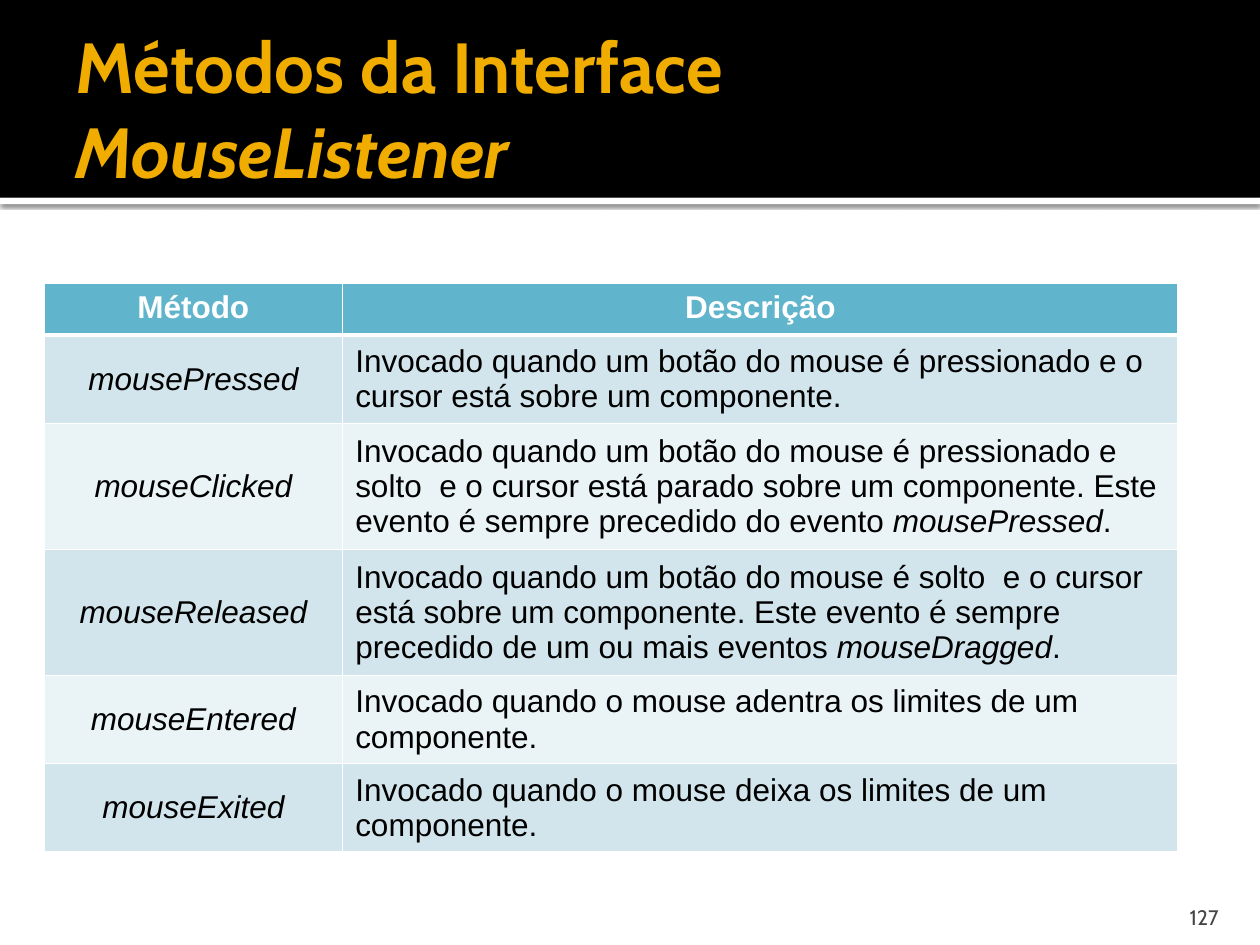
import pptx
import pptx.dml.color
import pptx.enum.shapes
import pptx.enum.text
import pptx.oxml
import pptx.oxml.ns
import pptx.util
from pptx.util import Inches

COLORS = {
    "white": "FFFFFF", "black": "000000", "title": "F0AD00", "number": "454545",
    "header": "60B5CC", "odd": "D2E5EC", "even": "EAF3F6",
}
ALIGN = pptx.enum.text.PP_ALIGN
ANCHOR = pptx.enum.text.MSO_ANCHOR
NAMESPACE = pptx.oxml.ns.nsdecls("a")

# Each description is a list of (text, italic) spans
HEADINGS = ["Método", "Descrição"]
METHODS = [
    ("mousePressed", [("Invocado quando um botão do mouse é pressionado e o cursor "
                       "está sobre um componente.", False)]),
    ("mouseClicked", [("Invocado quando um botão do mouse é pressionado e solto  e o cursor "
                       "está parado sobre um componente. Este evento é sempre precedido "
                       "do evento ", False), ("mousePressed", True), (".", False)]),
    ("mouseReleased", [("Invocado quando um botão do mouse é solto  e o cursor está sobre "
                        "um componente. Este evento é sempre precedido de um ou mais "
                        "eventos ", False), ("mouseDragged", True), (".", False)]),
    ("mouseEntered", [("Invocado quando o mouse adentra os limites de um componente.", False)]),
    ("mouseExited", [("Invocado quando o mouse deixa os limites de um componente.", False)]),
]


def rgb(name):
    return pptx.dml.color.RGBColor.from_string(COLORS[name])


def add_span(para, text, font="Arial", size=18, color="black", bold=False, italic=False):
    span = para.add_run()
    span.text = text
    span.font.name = font
    span.font.size = pptx.util.Pt(size)
    span.font.color.rgb = rgb(color)
    span.font.bold = bold
    span.font.italic = italic


class SlideBuilder:
    heading_font = "Cabin"

    def __init__(self, page):
        self.page = page

    def band(self, top, height, color, shadow=False):
        shape = self.page.shapes.add_shape(
            pptx.enum.shapes.MSO_SHAPE.RECTANGLE, 0, Inches(top), Inches(10), Inches(height))
        shape.fill.solid()
        shape.fill.fore_color.rgb = rgb(color)
        shape.line.fill.background()
        shape.shadow.inherit = False
        if shadow:
            effects = shape._element.spPr.find(pptx.oxml.ns.qn("a:effectLst"))
            effects.append(pptx.oxml.parse_xml(
                f'<a:outerShdw {NAMESPACE} blurRad="31750" dist="10160" dir="5400000">'
                f'<a:srgbClr val="{COLORS["black"]}"><a:alpha val="60000"/></a:srgbClr>'
                '</a:outerShdw>'))

    def text(self, place, margins, spans, anchor, align=ALIGN.LEFT, **style):
        box = self.page.shapes.add_textbox(*map(Inches, place))
        frame = box.text_frame
        frame.word_wrap = True
        frame.vertical_anchor = anchor
        (frame.margin_left, frame.margin_top,
         frame.margin_right, frame.margin_bottom) = map(Inches, margins)
        para = frame.paragraphs[0]
        para.alignment = align
        for text, italic in spans:
            add_span(para, text, font=self.heading_font, italic=italic, **style)

    def cell(self, cell, spans, fill, align, anchor=ANCHOR.MIDDLE, bottom=1, **style):
        cell.fill.solid()
        cell.fill.fore_color.rgb = rgb(fill)
        cell.vertical_anchor = anchor
        para = cell.text_frame.paragraphs[0]
        para.alignment = align
        for text, italic in spans:
            add_span(para, text, italic=italic, **style)
        # Borders come before the fill in the cell properties
        widths = {"lnL": 1, "lnR": 1, "lnT": 1, "lnB": bottom}
        for index, (side, width) in enumerate(widths.items()):
            cell._tc.tcPr.insert(index, pptx.oxml.parse_xml(
                f'<a:{side} {NAMESPACE} w="{pptx.util.Pt(width)}"><a:solidFill>'
                f'<a:srgbClr val="{COLORS["white"]}"/></a:solidFill></a:{side}>'))

    def table(self, place, widths, row_height, headings, methods):
        frame = self.page.shapes.add_table(
            len(methods) + 1, len(widths), *map(Inches, place))
        table = frame.table
        for column, width in zip(table.columns, widths):
            column.width = Inches(width)
        # Rows start at one line and grow with their text
        for row in table.rows:
            row.height = Inches(row_height)
        frame.height = Inches(place[3])

        for column, heading in enumerate(headings):
            self.cell(table.cell(0, column), [(heading, False)], "header", ALIGN.CENTER,
                      anchor=ANCHOR.TOP, bottom=3, color="white", bold=True)
        for row, (method, description) in enumerate(methods, start=1):
            fill = "odd" if row % 2 else "even"
            self.cell(table.cell(row, 0), [(method, True)], fill, ALIGN.CENTER)
            self.cell(table.cell(row, 1), description, fill, ALIGN.LEFT)


def main():
    deck = pptx.Presentation()
    deck.slide_width, deck.slide_height = Inches(10), Inches(7.5)
    builder = SlideBuilder(deck.slides.add_slide(deck.slide_layouts[6]))

    # Title band with a shadowed white edge
    builder.band(1.57, 0.05, "white", shadow=True)
    builder.band(0, 1.57, "black")
    builder.text((0.5, 0.17, 8.63, 1.37), (0.1, 0.05, 0.05, 0.05),
                 [("Métodos da Interface ", False), ("MouseListener", True)],
                 ANCHOR.MIDDLE, size=40.5, color="title", bold=True)

    # Table of methods
    builder.table((0.35, 2.25, 9, 4.51), (2.37, 6.63), 0.41, HEADINGS, METHODS)

    # Page number
    builder.text((8.97, 7.08, 0.8, 0.3), (0.1, 0.05, 0.1, 0), [("127", False)],
                 ANCHOR.BOTTOM, align=ALIGN.RIGHT, size=12, color="number")

    deck.save("out.pptx")


if __name__ == "__main__":
    main()
